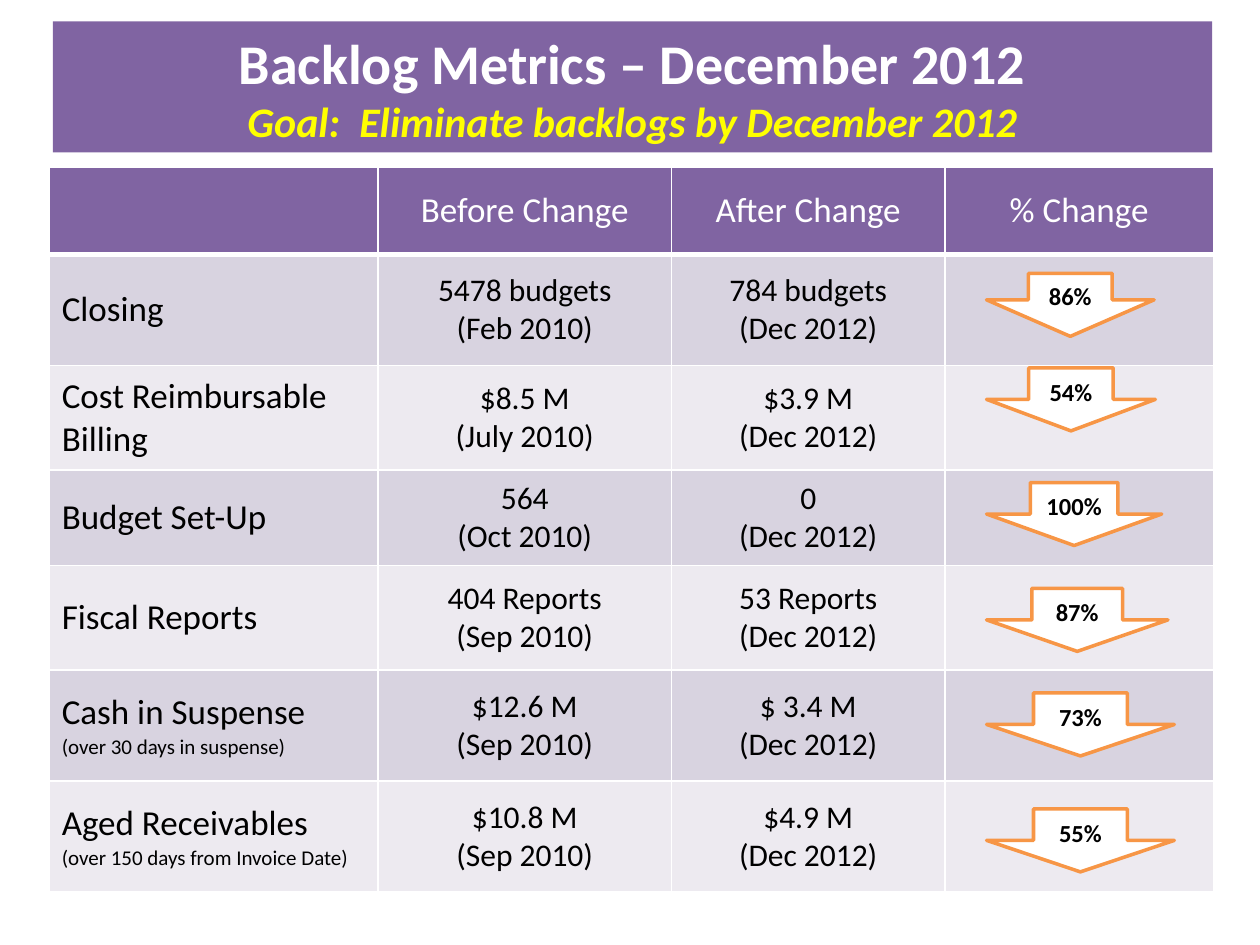
from dataclasses import dataclass

from pptx import Presentation
from pptx.dml.color import RGBColor as RGB
from pptx.enum.shapes import MSO_SHAPE as Shape
from pptx.enum.text import MSO_ANCHOR as Anchor, PP_ALIGN as Align
from pptx.oxml import parse_xml
from pptx.oxml.ns import nsdecls
from pptx.util import Inches, Pt


@dataclass(frozen=True)
class Theme:
    font: str = "Calibri"
    purple: str = "8064A2"
    bands: tuple = ("D8D3E0", "EDEAF0")
    white: str = "FFFFFF"
    black: str = "000000"
    yellow: str = "FFFF00"
    orange: str = "F79646"
    title: int = 32
    goal: int = 24
    label: int = 20
    value: int = 18
    badge: int = 14
    note: int = 12


WIDTHS = [2.61, 2.33, 2.17, 2.13]
HEIGHTS = [0.69, 0.88, 0.83, 0.76, 0.83, 0.88, 0.88]
HEADS = ["", "Before Change", "After Change", "% Change"]
METRICS = [
    ("Closing", "5478 budgets\n(Feb 2010)", "784 budgets"),
    ("Cost Reimbursable Billing", "$8.5 M\n(July 2010)", "$3.9 M"),
    ("Budget Set-Up", "564\n(Oct 2010)", "0"),
    ("Fiscal Reports", "404 Reports\n(Sep 2010)", "53 Reports"),
    ("Cash in Suspense\n(over 30 days in suspense)", "$12.6 M\n(Sep 2010)", "$ 3.4 M"),
    ("Aged Receivables\n(over 150 days from Invoice Date)", "$10.8 M\n(Sep 2010)", "$4.9 M"),
]
# Text, top, width and head depth of each drop arrow
DROPS = [
    ("86%", 2.17, 1.33, 0.58),
    ("54%", 2.92, 1.34, 0.5),
    ("100%", 3.83, 1.39, 0.5),
    ("87%", 4.67, 1.44, 0.5),
    ("73%", 5.5, 1.49, 0.5),
    ("55%", 6.42, 1.49, 0.5),
]


class Board:
    def __init__(self, slide, theme):
        self.slide = slide
        self.theme = theme

    def label(self, frame, text, sizes, colors, align=Align.CENTER, bold=False):
        """Fill a frame; sizes and colors hold one entry per paragraph."""
        frame.text = text
        for par, size, color in zip(frame.paragraphs, sizes, colors):
            par.alignment = align
            for run in par.runs:
                font = run.font
                font.name = self.theme.font
                font.size = Pt(size)
                font.bold = bold
                font.color.rgb = RGB.from_string(color)

    def shape(self, kind, box, fill, line=None):
        item = self.slide.shapes.add_shape(kind, *map(Inches, box))
        item.shadow.inherit = False
        item.fill.solid()
        item.fill.fore_color.rgb = RGB.from_string(fill)
        if line:
            item.line.color.rgb = RGB.from_string(line)
            item.line.width = Pt(2)
        else:
            item.line.fill.background()
        item.text_frame.vertical_anchor = Anchor.MIDDLE
        return item

    def banner(self, title, goal):
        t = self.theme
        frame = self.shape(Shape.RECTANGLE, (0.42, 0.17, 9.2, 1.04), t.purple).text_frame
        self.label(frame, f"{title}\n{goal}", (t.title, t.goal),
                   (t.white, t.yellow), bold=True)
        frame.paragraphs[1].runs[0].font.italic = True

    def drop(self, text, top, width, depth):
        t = self.theme
        arrow = self.shape(Shape.DOWN_ARROW, (7.83, top, width, 0.5), t.white, t.orange)
        arrow.adjustments[1] = depth
        frame = arrow.text_frame
        frame.margin_left = frame.margin_right = 0
        self.label(frame, text, [t.badge], [t.black], bold=True)

    def cell(self, cell, fill, base=1):
        """Set the borders, then the fill, which must follow them in the XML."""
        props = cell._tc.get_or_add_tcPr()
        for side, width in (("L", 1), ("R", 1), ("T", 1), ("B", base)):
            props.append(parse_xml(
                f'<a:ln{side} {nsdecls("a")} w="{Pt(width)}"><a:solidFill>'
                f'<a:srgbClr val="{self.theme.white}"/></a:solidFill></a:ln{side}>'))
        cell.fill.solid()
        cell.fill.fore_color.rgb = RGB.from_string(fill)
        cell.vertical_anchor = Anchor.MIDDLE

    def table(self, heads, metrics):
        t = self.theme
        box = map(Inches, (0.39, 1.33, sum(WIDTHS), sum(HEIGHTS)))
        grid = self.slide.shapes.add_table(len(HEIGHTS), len(WIDTHS), *box).table
        for col, width in zip(grid.columns, WIDTHS):
            col.width = Inches(width)
        for row, height in zip(grid.rows, HEIGHTS):
            row.height = Inches(height)
        for c, head in enumerate(heads):
            cell = grid.cell(0, c)
            self.cell(cell, t.purple, 3)
            self.label(cell.text_frame, head, [t.label], [t.white])
        for r, (name, before, after) in enumerate(metrics, 1):
            texts = (name, before, f"{after}\n(Dec 2012)", "")
            for c, text in enumerate(texts):
                cell = grid.cell(r, c)
                self.cell(cell, t.bands[(r - 1) % 2])
                sizes = (t.value, t.value) if c else (t.label, t.note)
                align = Align.CENTER if c else Align.LEFT
                self.label(cell.text_frame, text, sizes, [t.black] * 2, align)


def main():
    deck = Presentation()
    deck.slide_width, deck.slide_height = Inches(10), Inches(7.5)
    board = Board(deck.slides.add_slide(deck.slide_layouts[6]), Theme())
    board.table(HEADS, METRICS)
    board.banner("Backlog Metrics – December 2012",
                 "Goal:  Eliminate backlogs by December 2012")
    for drop in DROPS:
        board.drop(*drop)
    deck.save("out.pptx")


if __name__ == "__main__":
    main()
